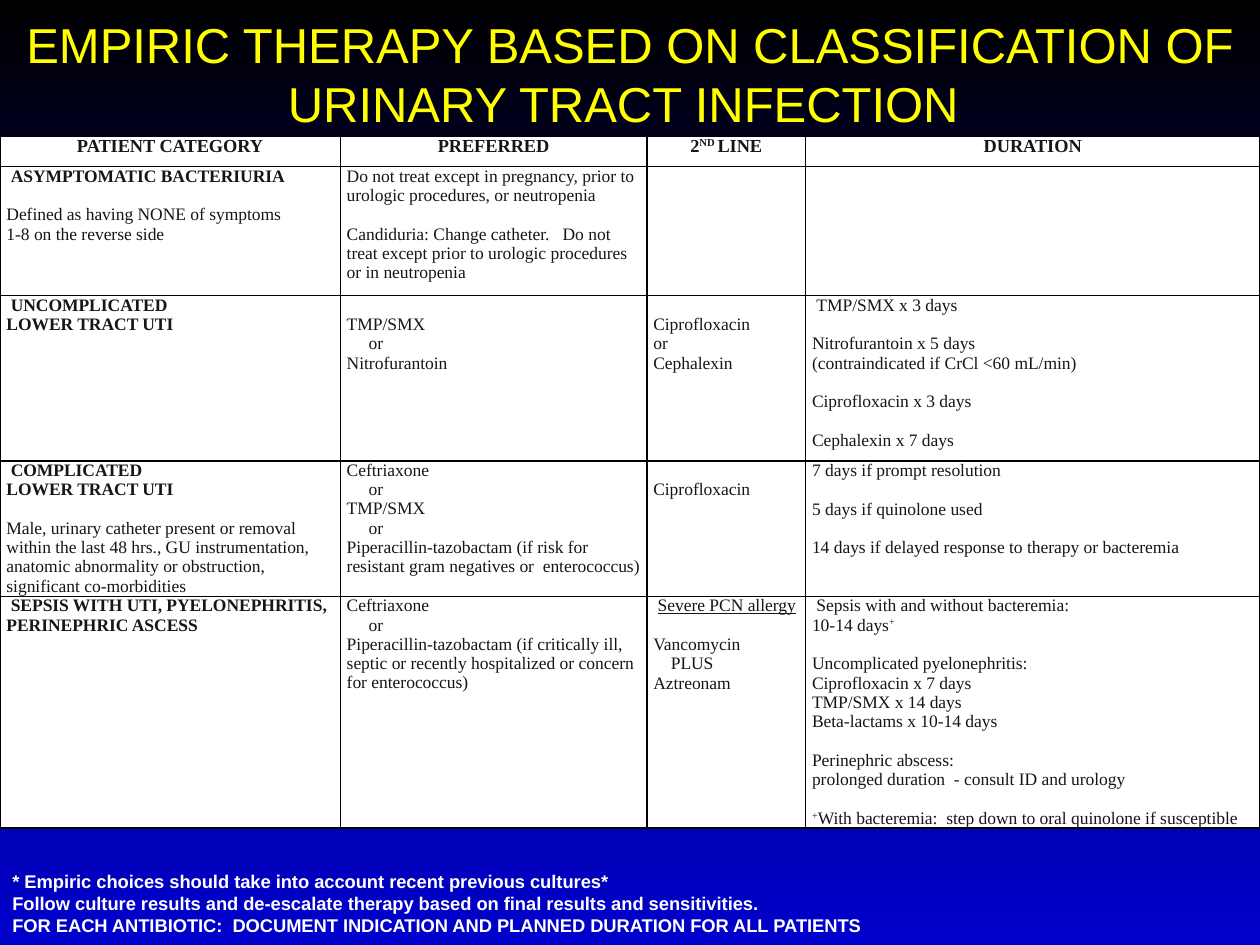
import dataclasses
import pptx
import pptx.dml.color
import pptx.enum.text
import pptx.oxml
import pptx.oxml.ns
import pptx.util

Cm, Pt = pptx.util.Cm, pptx.util.Pt
Align = pptx.enum.text.PP_ALIGN
Anchor = pptx.enum.text.MSO_ANCHOR


@dataclasses.dataclass(frozen=True)
class Theme:
    sans: str = "Arial"
    serif: str = "Times New Roman"
    ink: str = "161616"
    white: str = "FFFFFF"
    yellow: str = "FFFF00"
    black: str = "000000"
    blue: str = "0000CC"
    title: float = 28
    head: float = 10.5
    body: float = 10
    note: float = 10.5
    line: float = 11.07
    rule: float = 1


@dataclasses.dataclass(frozen=True)
class Para:
    """Runs of text, the blank lines above them and the indent in points."""
    runs: tuple
    gap: int = 0
    dent: float = 0
    bold: bool = False


THEME = Theme()
SUP = {"sup": True}


def para(*runs, **form):
    return Para(runs, **form)


def gap(*runs, **form):
    return Para(runs, gap=1, **form)


def label(first, *rest):
    """Bold category name whose first line is slightly indented."""
    return [para(first, bold=True, dent=2.5)] + [para(s, bold=True) for s in rest]


OR = para("or", dent=12.5)
HEADS = [
    [para("PATIENT CATEGORY", bold=True)],
    [para("PREFERRED", bold=True)],
    [para("2", ("ND ", SUP), "LINE", bold=True)],
    [para("DURATION", bold=True)],
]
ROWS = [
    [
        label("ASYMPTOMATIC BACTERIURIA")
        + [gap("Defined as having NONE of symptoms"), para("1-8 on the reverse side")],
        [para("Do not treat except in pregnancy, prior to urologic procedures, or neutropenia"),
         gap("Candiduria: Change catheter.   Do not treat except prior to urologic "
             "procedures or in neutropenia")],
        [],
        [],
    ],
    [
        label("UNCOMPLICATED", "LOWER TRACT UTI"),
        [gap("TMP/SMX"), OR, para("Nitrofurantoin")],
        [gap("Ciprofloxacin"), para("or"), para("Cephalexin")],
        [para("TMP/SMX x 3 days", dent=2.5), gap("Nitrofurantoin x 5 days"),
         para("(contraindicated if CrCl <60 mL/min)"),
         gap("Ciprofloxacin x 3 days"), gap("Cephalexin x 7 days")],
    ],
    [
        label("COMPLICATED", "LOWER TRACT UTI")
        + [gap("Male, urinary catheter present or removal within the last 48 hrs., "
               "GU instrumentation, anatomic abnormality or obstruction, "
               "significant co-morbidities")],
        [para("Ceftriaxone"), OR, para("TMP/SMX"), OR,
         para("Piperacillin-tazobactam (if risk for resistant gram negatives or  enterococcus)")],
        [gap("Ciprofloxacin")],
        [para("7 days if prompt resolution"), gap("5 days if quinolone used"),
         gap("14 days if delayed response to therapy or bacteremia")],
    ],
    [
        label("SEPSIS WITH UTI, PYELONEPHRITIS,", "PERINEPHRIC ASCESS"),
        [para("Ceftriaxone"), OR,
         para("Piperacillin-tazobactam (if critically ill, septic or recently "
              "hospitalized or concern for enterococcus)")],
        [para(("Severe PCN allergy", {"under": True}), dent=2.5),
         gap("Vancomycin"), para("PLUS", dent=10), para("Aztreonam")],
        [para("Sepsis with and without bacteremia:", dent=2.5),
         para("10-14 days", ("+", SUP)),
         gap("Uncomplicated pyelonephritis:"), para("Ciprofloxacin x 7 days"),
         para("TMP/SMX x 14 days"), para("Beta-lactams x 10-14 days"),
         gap("Perinephric abscess:"),
         para("prolonged duration  - consult ID and urology"),
         gap(("+", SUP), "With bacteremia:  step down to oral quinolone if susceptible")],
    ],
]
NOTES = [
    "* Empiric choices should take into account recent previous cultures*",
    "Follow culture results and de-escalate therapy based on final results and sensitivities.",
    "FOR EACH ANTIBIOTIC:  DOCUMENT INDICATION AND PLANNED DURATION FOR ALL PATIENTS",
]


def rgb(code):
    return pptx.dml.color.RGBColor.from_string(code)


def write(frame, paras, *, size, color, font, align=Align.LEFT):
    """Fill a text frame; a gap above its first line is left to the top margin."""
    for i, item in enumerate(paras):
        par = frame.paragraphs[0] if i == 0 else frame.add_paragraph()
        par.alignment = align
        if i and item.gap:
            par.space_before = Pt(item.gap * THEME.line)
        if item.dent:
            par._p.get_or_add_pPr().set("marL", str(Pt(item.dent)))
        for part in item.runs:
            text, form = (part, {}) if isinstance(part, str) else part
            run = par.add_run()
            run.text = text
            face = run.font
            face.name, face.size, face.bold = font, Pt(size), item.bold
            face.color.rgb = rgb(color)
            if form.get("under"):
                face.underline = True
            if form.get("sup"):
                run._r.get_or_add_rPr().set("baseline", "30000")


def edge(cell):
    """Rule all four sides of a cell."""
    prop = cell._tc.get_or_add_tcPr()
    for side in "LRTB":
        prop.append(pptx.oxml.parse_xml(
            f'<a:ln{side} {pptx.oxml.ns.nsdecls("a")} w="{Pt(THEME.rule)}">'
            f'<a:solidFill><a:srgbClr val="{THEME.black}"/></a:solidFill></a:ln{side}>'))


def paint(slide):
    fill = slide.background.fill
    fill.gradient()
    fill.gradient_angle = 270
    for place, (stop, code) in enumerate(
            zip(fill.gradient_stops, (THEME.black, THEME.blue))):
        stop.color.rgb = rgb(code)
        stop.position = place


def block(slide, box, paras, anchor=Anchor.TOP, **form):
    frame = slide.shapes.add_textbox(*box).text_frame
    frame.word_wrap = True
    frame.vertical_anchor = anchor
    write(frame, paras, **form)


def grid(slide, box, wide, high):
    table = slide.shapes.add_table(len(high), len(wide), *box).table
    for col, size in zip(table.columns, wide):
        col.width = Cm(size)
    for row, size in zip(table.rows, high):
        row.height = Cm(size)
    for r, row in enumerate([HEADS] + ROWS):
        for c, paras in enumerate(row):
            cell = table.cell(r, c)
            lead = paras[0].gap if paras else 0
            cell.margin_left = cell.margin_right = Cm(0.13)
            cell.margin_top, cell.margin_bottom = Pt(lead * THEME.line), 0
            edge(cell)
            cell.fill.solid()
            cell.fill.fore_color.rgb = rgb(THEME.white)
            write(cell.text_frame, paras, color=THEME.ink, font=THEME.serif,
                  size=THEME.body if r else THEME.head,
                  align=Align.LEFT if r else Align.CENTER)


def main():
    deck = pptx.Presentation()
    deck.slide_width, deck.slide_height = Cm(25.4), Cm(19.05)
    slide = deck.slides.add_slide(deck.slide_layouts[6])
    paint(slide)
    wide, high = (6.86, 6.18, 3.2, 9.16), (0.62, 2.6, 3.33, 2.73, 4.66)
    grid(slide, (0, Cm(2.74), Cm(sum(wide)), Cm(sum(high))), wide, high)
    block(slide, (0, Cm(17.42), Cm(18.42), Cm(1.63)),
          [para(s, bold=True) for s in NOTES],
          size=THEME.note, color=THEME.white, font=THEME.sans)
    block(slide, (0, 0, Cm(25.4), Cm(2.97)),
          [para("EMPIRIC THERAPY BASED ON CLASSIFICATION OF URINARY TRACT INFECTION ")],
          Anchor.MIDDLE, size=THEME.title, color=THEME.yellow, font=THEME.sans,
          align=Align.CENTER)
    deck.save("out.pptx")


if __name__ == "__main__":
    main()
